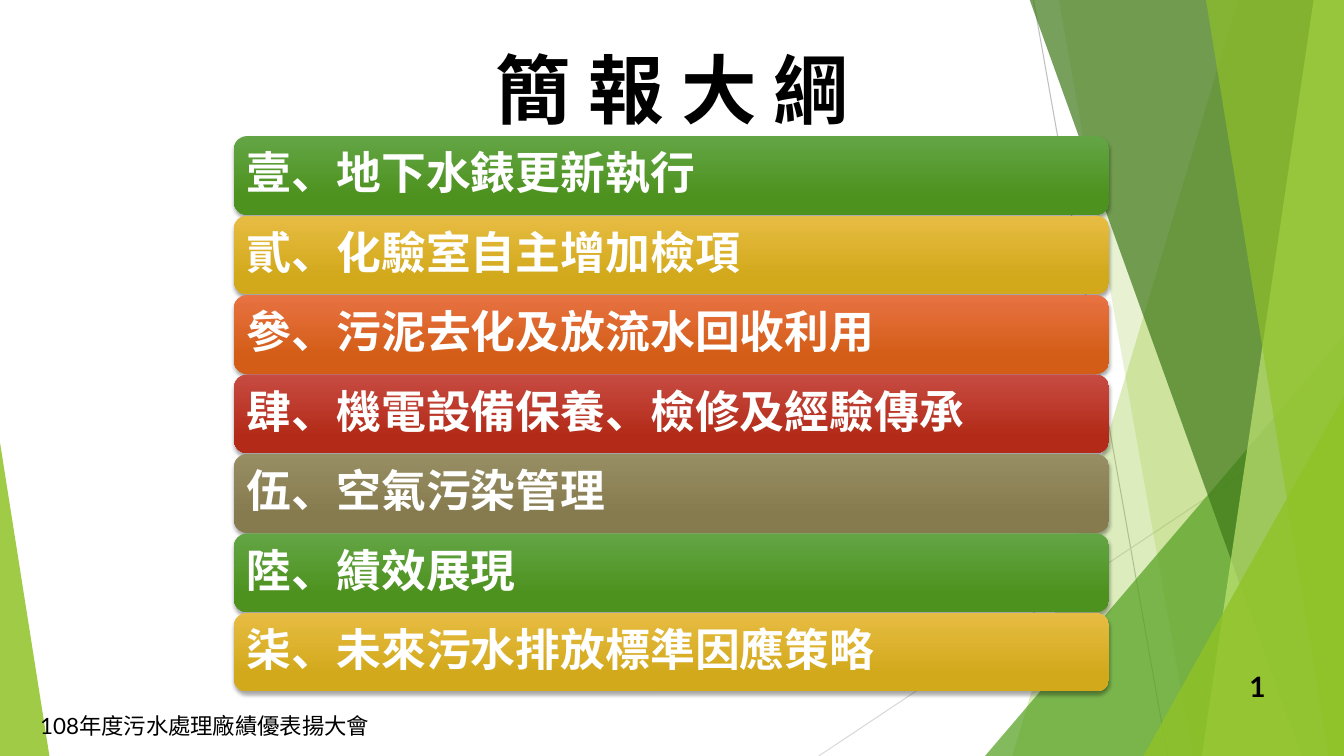
from lxml import etree
from pptx import Presentation
from pptx.dml.color import RGBColor
from pptx.enum import shapes as sh, text as tx
from pptx.oxml.ns import qn
from pptx.util import Inches, Pt

FONT = "Lato"
GREEN = ("63A545", "4D921E")
GOLD = ("E7BC43", "D2A91B")
ORANGE = ("E87242", "D35D16")
RED = ("C74B42", "B32B18")
OLIVE = ("988E64", "857B4E")
TOPICS = [
    ("壹、地下水錶更新執行", GREEN),
    ("貳、化驗室自主增加檢項", GOLD),
    ("參、污泥去化及放流水回收利用", ORANGE),
    ("肆、機電設備保養、檢修及經驗傳承", RED),
    ("伍、空氣污染管理", OLIVE),
    ("陸、績效展現", GREEN),
    ("柒、未來污水排放標準因應策略", GOLD),
]
FIRST, LAST = 1.35, 6.08
RIGHT, TOP, BASE = 13.33, -0.01, 7.5


def color(code):
    return RGBColor.from_string(code)


def tint(shape, code, alpha):
    """Fill a shape with a see-through colour; alpha is opacity in percent."""
    shape.shadow.inherit = False
    shape.line.fill.background()
    shape.fill.solid()
    shape.fill.fore_color.rgb = color(code)
    rgb = shape.fill._xPr.find(".//" + qn("a:srgbClr"))
    etree.SubElement(rgb, qn("a:alpha"), val=str(alpha * 1000))


def add_line(slide, start, end, code):
    ends = [Inches(n) for n in (*start, *end)]
    line = slide.shapes.add_connector(sh.MSO_CONNECTOR.STRAIGHT, *ends)
    line.line.color.rgb = color(code)
    line.line.width = Pt(0.75)
    etree.SubElement(line._element.spPr, qn("a:effectLst"))


def add_band(slide, top, base, code, alpha):
    """Draw a facet from a slanted left edge to the right slide edge."""
    pen = slide.shapes.build_freeform(Inches(top), Inches(TOP))
    spots = [(RIGHT, TOP), (RIGHT, BASE), (base, BASE)]
    pen.add_line_segments([(Inches(x), Inches(y)) for x, y in spots])
    tint(pen.convert_to_shape(), code, alpha)


def add_wedge(slide, box, apex, code, alpha):
    kind = sh.MSO_SHAPE.ISOSCELES_TRIANGLE
    wedge = slide.shapes.add_shape(kind, *[Inches(n) for n in box])
    wedge.adjustments[0] = apex
    tint(wedge, code, alpha)


def set_text(shape, words, size, code, bold, align):
    frame = shape.text_frame
    frame.word_wrap = True
    frame.vertical_anchor = tx.MSO_ANCHOR.MIDDLE
    frame.text = words
    para = frame.paragraphs[0]
    para.alignment = align
    font = para.runs[0].font
    font.name, font.size, font.bold = FONT, Pt(size), bold
    font.color.rgb = color(code)
    return frame


def add_label(slide, box, words, size, bold, align):
    label = slide.shapes.add_textbox(*[Inches(n) for n in box])
    set_text(label, words, size, "000000", bold, align)


def add_shade(shape):
    """Give a shape a soft shadow straight below it."""
    shape.shadow.inherit = False
    effects = shape._element.spPr.find(qn("a:effectLst"))
    shade = etree.SubElement(
        effects, qn("a:outerShdw"), blurRad=str(Pt(3)), dist=str(Pt(2)),
        dir="5400000", algn="ctr", rotWithShape="0")
    rgb = etree.SubElement(shade, qn("a:srgbClr"), val="000000")
    etree.SubElement(rgb, qn("a:alpha"), val="35000")


def add_bar(slide, top, words, pair):
    box = [Inches(n) for n in (2.32, top, 8.68, 0.78)]
    bar = slide.shapes.add_shape(sh.MSO_SHAPE.ROUNDED_RECTANGLE, *box)
    bar.line.fill.background()
    bar.fill.gradient()
    bar.fill.gradient_angle = 270
    for stop, spot, code in zip(bar.fill.gradient_stops, (0, 0.78), pair):
        stop.position = spot
        stop.color.rgb = color(code)
    add_shade(bar)
    frame = set_text(bar, words, 32, "FFFFFF", True, tx.PP_ALIGN.LEFT)
    frame.margin_left = frame.margin_right = Inches(0.09)
    frame.paragraphs[0].line_spacing = 0.9


def add_decor(slide):
    add_line(slide, (10.25, 0), (11.58, BASE), "BFBFBF")
    add_line(slide, (RIGHT, 4.03), (8.12, BASE), "D9D9D9")
    add_band(slide, 12.28, 10.04, "90C226", 30)
    add_band(slide, 10.5, 11.83, "90C226", 20)
    add_wedge(slide, (9.77, 3.33, 3.56, 4.17), 1, "54A021", 72)
    add_band(slide, 10.21, 12.91, "3F7819", 70)
    add_band(slide, 13.03, 11.92, "C0E474", 70)
    add_band(slide, 11.96, 13.18, "90C226", 65)
    add_wedge(slide, (11.34, 3.93, 1.99, 3.57), 1, "90C226", 80)
    add_wedge(slide, (0, 4.39, 0.49, 3.11), 0, "90C226", 85)


def main():
    deck = Presentation()
    deck.slide_width, deck.slide_height = Inches(RIGHT), Inches(BASE)
    slide = deck.slides.add_slide(deck.slide_layouts[6])
    add_decor(slide)
    align = tx.PP_ALIGN
    add_label(slide, (1.97, 0.41, 9.4, 0.93), "簡 報 大 綱", 54, True,
              align.CENTER)
    step = (LAST - FIRST) / (len(TOPICS) - 1)
    for i, (words, pair) in enumerate(TOPICS):
        add_bar(slide, FIRST + i * step, words, pair)
    add_label(slide, (11.9, 6.61, 0.75, 0.4), "1", 20, True, align.RIGHT)
    add_label(slide, (0.3, 7, 6.89, 0.4), "108年度污水處理廠績優表揚大會", 16,
              False, align.LEFT)
    deck.save("out.pptx")


if __name__ == "__main__":
    main()
